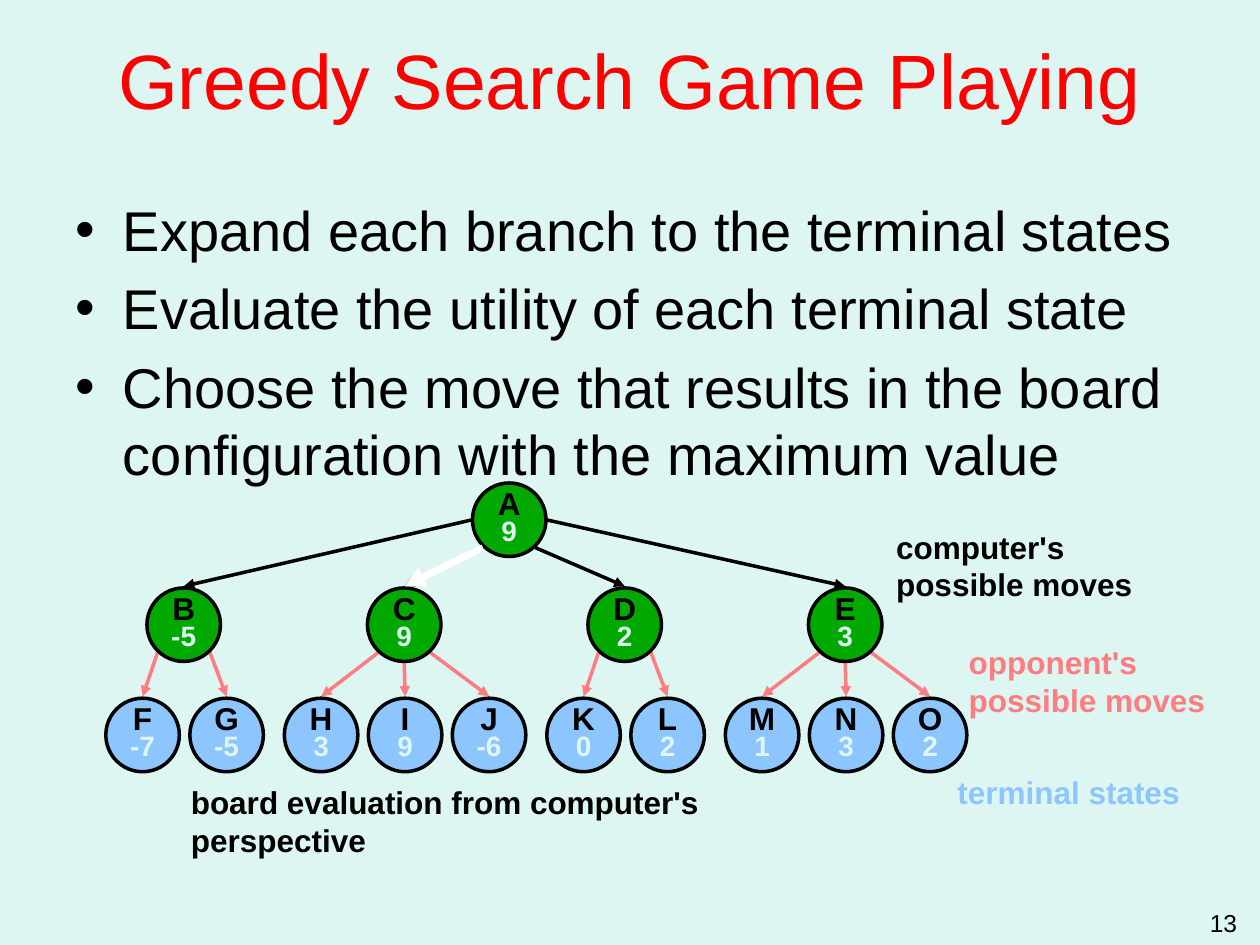
from dataclasses import dataclass

from lxml.etree import SubElement
from pptx import Presentation
from pptx.dml.color import RGBColor
from pptx.enum.shapes import MSO_CONNECTOR, MSO_SHAPE
from pptx.enum.text import MSO_ANCHOR, MSO_AUTO_SIZE, PP_ALIGN
from pptx.oxml.ns import qn
from pptx.util import Pt

FONT = "Arial"
BLACK, WHITE, RED = "000000", "FFFFFF", "FF0000"
PALE, GREEN, BLUE, PINK = "DEF6F1", "00A800", "8DC6FF", "FF7C80"

RADIUS = 21
DIAGONAL_X, DIAGONAL_Y = 15, 16  # lower corners of a circle, from its centre
ROOT_X, ROOT_Y = 291, 297
MOVE_X, MOVE_Y, MOVE_STEP = 105, 357, 126
TERMINAL_Y, TERMINAL_STEP = 420, 48


@dataclass
class State:
    letter: str
    value: int
    x: float
    y: float
    fill: str


@dataclass
class Label:
    lines: list[str]
    left: float
    top: float
    width: float
    height: float
    color: str


def rgb(color: str) -> RGBColor:
    return RGBColor.from_string(color)


def add_run(paragraph, text: str, size: float, color: str, bold: bool = False):
    run = paragraph.add_run()
    run.text = text
    font = run.font
    font.name, font.size, font.bold = FONT, Pt(size), bold
    font.color.rgb = rgb(color)


def place(part, left: float, top: float, width: float, height: float):
    part.left, part.top = Pt(left), Pt(top)
    part.width, part.height = Pt(width), Pt(height)


def draw_state(slide, state: State):
    circle = slide.shapes.add_shape(
        MSO_SHAPE.OVAL, Pt(state.x - RADIUS), Pt(state.y - RADIUS),
        Pt(2 * RADIUS), Pt(2 * RADIUS))
    circle.shadow.inherit = False
    circle.fill.solid()
    circle.fill.fore_color.rgb = rgb(state.fill)
    circle.line.color.rgb = rgb(BLACK)
    circle.line.width = Pt(2)
    frame = circle.text_frame
    frame.word_wrap = False
    frame.vertical_anchor = MSO_ANCHOR.MIDDLE
    letter_line, value_line = frame.paragraphs[0], frame.add_paragraph()
    for line in (letter_line, value_line):
        line.alignment = PP_ALIGN.CENTER
        line.line_spacing = 0.75
    add_run(letter_line, state.letter, 18, BLACK, True)
    add_run(value_line, str(state.value), 16, PALE, True)


def draw_arrow(slide, parent: State, child: State, dx: float, dy: float,
               color: str, width: float = 2):
    """Draw from an offset on the parent to just above the child."""
    arrow = slide.shapes.add_connector(
        MSO_CONNECTOR.STRAIGHT, Pt(parent.x + dx), Pt(parent.y + dy),
        Pt(child.x), Pt(child.y - RADIUS - 1))
    arrow.line.color.rgb = rgb(color)
    arrow.line.width = Pt(width)
    SubElement(arrow.line._get_or_add_ln(), qn("a:tailEnd"), type="triangle")
    SubElement(arrow._element.spPr, qn("a:effectLst"))


def draw_label(slide, label: Label):
    box = slide.shapes.add_textbox(Pt(label.left), Pt(label.top),
                                   Pt(label.width), Pt(label.height))
    frame = box.text_frame
    frame.word_wrap = True
    frame.auto_size = MSO_AUTO_SIZE.SHAPE_TO_FIT_TEXT
    paragraph = frame.paragraphs[0]
    for index, text in enumerate(label.lines):
        if index:
            paragraph.add_line_break()
        add_run(paragraph, text, 18, label.color, True)


def fill_title(title):
    place(title, 36, 0, 648, 90)
    frame = title.text_frame
    frame.auto_size = MSO_AUTO_SIZE.NONE
    frame.vertical_anchor = MSO_ANCHOR.MIDDLE
    frame.paragraphs[0].alignment = PP_ALIGN.CENTER
    add_run(frame.paragraphs[0], "Greedy Search Game Playing", 44, RED)


def fill_body(body, bullets: list[str]):
    place(body, 36, 108, 666, 144)
    frame = body.text_frame
    frame.auto_size = MSO_AUTO_SIZE.NONE
    frame.vertical_anchor = MSO_ANCHOR.TOP
    for index, text in enumerate(bullets):
        paragraph = frame.add_paragraph() if index else frame.paragraphs[0]
        paragraph.space_before = Pt(6.4 if index else 0)
        properties = paragraph._p.get_or_add_pPr()
        properties.set("marL", str(Pt(27)))
        properties.set("indent", str(-Pt(27)))
        bullet_color = SubElement(properties, qn("a:buClr"))
        SubElement(bullet_color, qn("a:srgbClr"), val=BLACK)
        SubElement(properties, qn("a:buChar"), char="•")
        add_run(paragraph, text, 32, BLACK)


def draw_tree(slide):
    root = State("A", 9, ROOT_X, ROOT_Y, GREEN)
    tree = [
        ("B", -5, [("F", -7), ("G", -5)]),
        ("C", 9, [("H", 3), ("I", 9), ("J", -6)]),
        ("D", 2, [("K", 0), ("L", 2)]),
        ("E", 3, [("M", 1), ("N", 3), ("O", 2)]),
    ]
    root_exits = [(-RADIUS, 0), (-DIAGONAL_X, DIAGONAL_Y),
                  (DIAGONAL_X, DIAGONAL_Y), (RADIUS, 0)]
    states, moves = [root], []
    for column, (letter, value, replies) in enumerate(tree):
        move = State(letter, value, MOVE_X + column * MOVE_STEP, MOVE_Y, GREEN)
        moves.append(move)
        states.append(move)
        draw_arrow(slide, root, move, *root_exits[column], BLACK)

        # Opponent's replies, centred below the move
        middle = (len(replies) - 1) / 2
        for index, (reply, utility) in enumerate(replies):
            offset = index - middle
            terminal = State(reply, utility, move.x + 0.5 + offset * TERMINAL_STEP,
                             TERMINAL_Y, BLUE)
            states.append(terminal)
            side = (offset > 0) - (offset < 0)
            draw_arrow(slide, move, terminal, side * DIAGONAL_X,
                       DIAGONAL_Y if side else RADIUS, PINK)
    for state in states:
        draw_state(slide, state)

    # Chosen move
    draw_arrow(slide, root, moves[1], *root_exits[1], WHITE, 4)


def main():
    presentation = Presentation()
    presentation.slide_width, presentation.slide_height = Pt(720), Pt(540)
    slide = presentation.slides.add_slide(presentation.slide_layouts[1])
    slide.background.fill.solid()
    slide.background.fill.fore_color.rgb = rgb(PALE)

    # Title and list
    fill_title(slide.shapes.title)
    fill_body(slide.placeholders[1], [
        "Expand each branch to the terminal states",
        "Evaluate the utility of each terminal state",
        "Choose the move that results in the board configuration"
        " with the maximum value",
    ])

    draw_tree(slide)

    # Legend
    for label in [
        Label(["computer's", "possible moves"], 505, 298, 152, 50, BLACK),
        Label(["opponent's", "possible moves"], 546.5, 364, 152, 50, PINK),
        Label(["board evaluation from computer's perspective"],
              102, 444, 390, 50, BLACK),
        Label(["terminal states"], 540, 438, 144, 29, BLUE),
    ]:
        draw_label(slide, label)

    # Page number
    page = slide.shapes.add_textbox(Pt(546), Pt(515.5), Pt(168), Pt(18))
    page.text_frame.word_wrap = True
    page_line = page.text_frame.paragraphs[0]
    page_line.alignment = PP_ALIGN.RIGHT
    add_run(page_line, "13", 14, BLACK)

    presentation.save("out.pptx")


if __name__ == "__main__":
    main()
